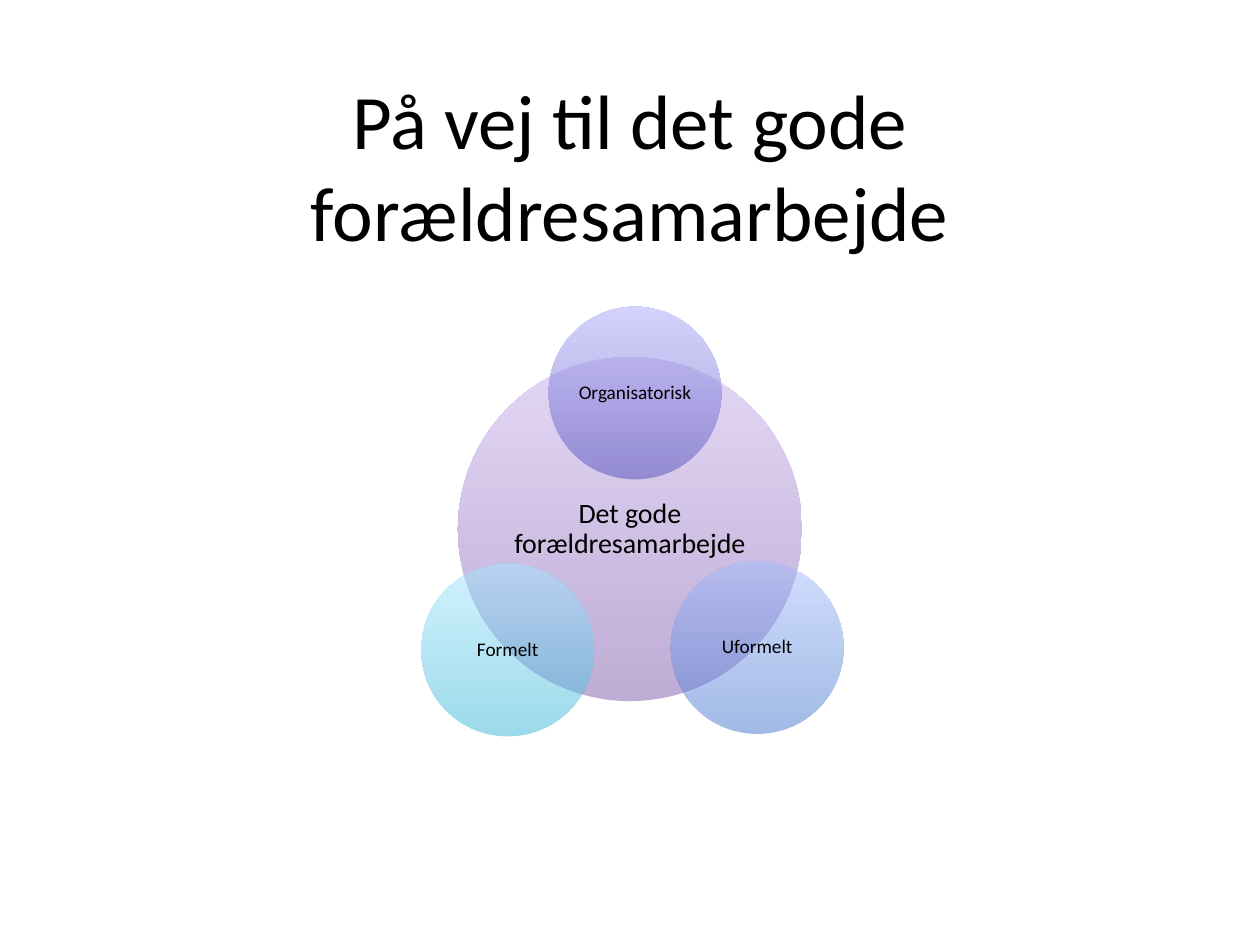
from lxml import etree
from pptx import Presentation
from pptx import util as u
from pptx.dml.color import RGBColor
from pptx.enum import shapes, text
from pptx.oxml.ns import qn

WIDTH, HEIGHT = 10, 7.5
FONT = "Calibri"
BIG, SMALL = 2.73, 1.37

# label, centre x, centre y, diameter, text size, bottom colour, top colour
CIRCLES = [
    ("Det gode forældresamarbejde", 5, 4.2, BIG, 16, "7F5BAB", "C8B0ED"),
    ("Organisatorisk", 5.04, 3.12, SMALL, 11, "534FBB", "A9A7F9"),
    ("Uformelt", 6.01, 5.14, SMALL, 11, "4476CA", "A4BDFF"),
    ("Formelt", 4.03, 5.16, SMALL, 11, "39B7D8", "A7E6FF"),
]


def rgb(code):
    return RGBColor.from_string(code)


def write(shape, words, size, inset=None):
    """Fill the shape with one centred paragraph and return it."""
    frame = shape.text_frame
    frame.word_wrap = True
    frame.vertical_anchor = text.MSO_ANCHOR.MIDDLE
    if inset is not None:
        frame.margin_left = frame.margin_right = u.Inches(inset)
        frame.margin_top = frame.margin_bottom = u.Inches(inset)
    para = frame.paragraphs[0]
    para.alignment = text.PP_ALIGN.CENTER
    run = para.add_run()
    run.text = words
    run.font.name = FONT
    run.font.size = u.Pt(size)
    run.font.color.rgb = rgb("000000")
    return para


def shade(shape, low, high):
    """Half-transparent gradient that runs from the bottom to the top."""
    shape.fill.gradient()
    shape.fill.gradient_angle = 90
    for stop, code in zip(shape.fill.gradient_stops, (low, high)):
        stop.color.rgb = rgb(code)
    for tint in shape.element.spPr.iter(qn("a:srgbClr")):
        etree.SubElement(tint, qn("a:alpha")).set("val", "50000")


def title(slide, words):
    box = slide.shapes.add_textbox(
        u.Inches(0.075 * WIDTH), u.Inches(-0.49),
        u.Inches(0.85 * WIDTH), u.Inches(3.59))
    write(box, words, 44)


def circle(slide, label, mid_x, mid_y, size, points, low, high):
    disc = slide.shapes.add_shape(
        shapes.MSO_SHAPE.OVAL,
        u.Inches(mid_x - size / 2), u.Inches(mid_y - size / 2),
        u.Inches(size), u.Inches(size))
    disc.shadow.inherit = False
    disc.line.fill.background()
    shade(disc, low, high)
    write(disc, label, points, inset=0.02).line_spacing = 0.9


def main():
    deck = Presentation()
    deck.slide_width, deck.slide_height = u.Inches(WIDTH), u.Inches(HEIGHT)
    slide = deck.slides.add_slide(deck.slide_layouts[6])
    title(slide, "På vej til det gode forældresamarbejde")
    for item in CIRCLES:
        circle(slide, *item)
    deck.save("out.pptx")


if __name__ == "__main__":
    main()
